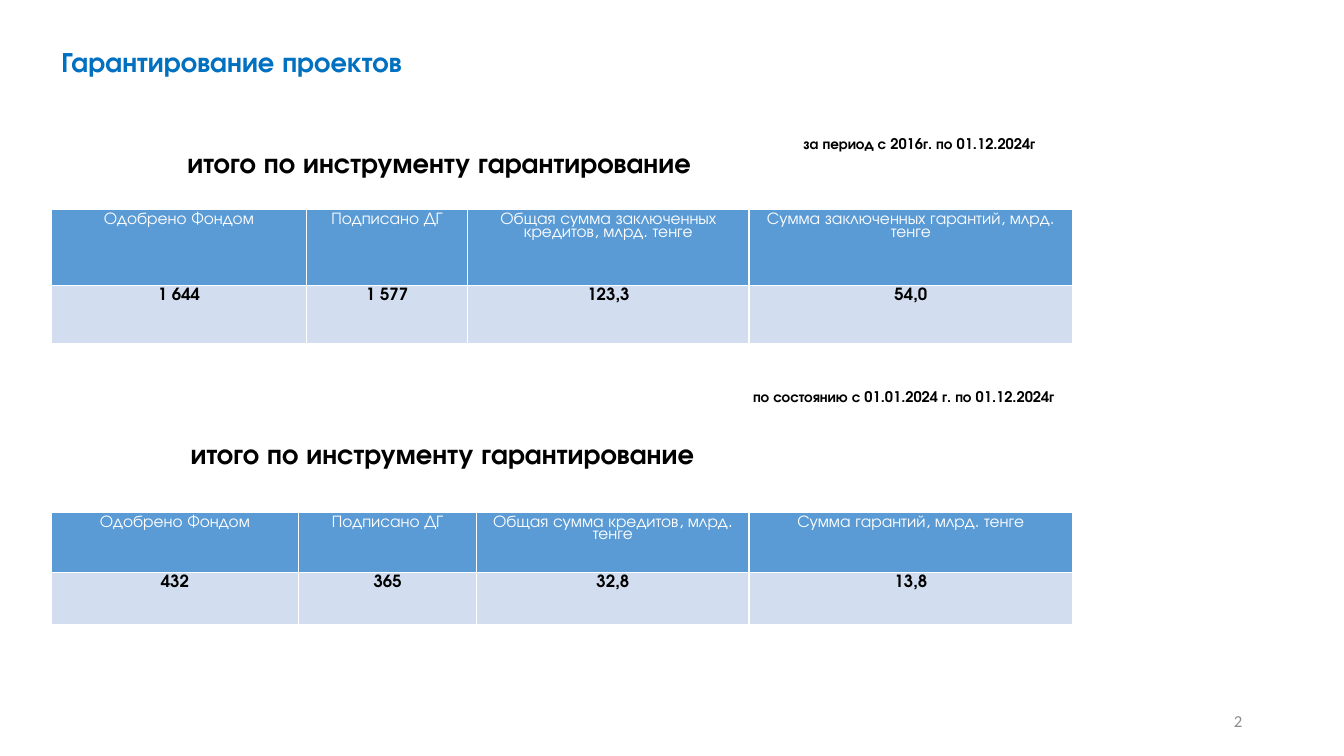
import pptx
import pptx.util
import pptx.dml.color
import pptx.enum.text
import pptx.oxml
import pptx.oxml.ns

PX = 9144  # EMU per px, 100 px to the inch
ALIGN = pptx.enum.text.PP_ALIGN
THEME = {
    "font": "TeX Gyre Adventor", "number_font": "Calibri",
    "title": "0070C0", "text": "000000", "number": "8C8C8C", "white": "FFFFFF",
    "header": "5B9BD5", "body": "D2DEEF",
    "heading_size": 20, "period_size": 10.5, "small_size": 12,
}


def write(frame, text, size, color, bold=True, align=ALIGN.LEFT, font=THEME["font"]):
    frame.text = text
    paragraph = frame.paragraphs[0]
    paragraph.alignment = align
    letters = paragraph.runs[0].font
    letters.name, letters.size, letters.bold = font, pptx.util.Pt(size), bold
    letters.color.rgb = pptx.dml.color.RGBColor.from_string(color)
    return paragraph


def add_text(left, top, width, height, *style, **options):
    frame = slide.shapes.add_textbox(left * PX, top * PX, width * PX, height * PX).text_frame
    frame.word_wrap = True
    write(frame, *style, **options)
    return frame


deck = pptx.Presentation()
deck.slide_width, deck.slide_height = 1333 * PX, 750 * PX
slide = deck.slides.add_slide(deck.slide_layouts[6])

# Title
add_text(51, 39, 479, 44, "Гарантирование проектов", THEME["heading_size"], THEME["title"])

# Periods
for period, left, top, width in [
    ("за период с 2016г. по 01.12.2024г", 787, 129, 319),
    ("по состоянию с 01.01.2024 г. по 01.12.2024г", 737, 380, 339),
]:
    add_text(left, top, width, 28, period, THEME["period_size"], THEME["text"])

# Table headings
for left, top, width, inset in [(176, 139, 584, 10), (117, 428, 735, 72)]:
    heading = add_text(left, top, width, 44, "итого по инструменту гарантирование",
                       THEME["heading_size"], THEME["text"])
    heading.margin_left = inset * PX

# Totals tables
totals = [
    (208, [253, 160, 279, 321], [75, 58], [
        ["Одобрено Фондом", "Подписано ДГ", "Общая сумма заключенных кредитов, млрд. тенге",
         "Сумма заключенных гарантий, млрд. тенге"],
        ["1 644", "1 577", "123,3", "54,0"]]),
    (508, [245, 177, 270, 321], [60, 52], [
        ["Одобрено Фондом", "Подписано ДГ", "Общая сумма кредитов, млрд. тенге",
         "Сумма гарантий, млрд. тенге"],
        ["432", "365", "32,8", "13,8"]]),
]
for top, widths, heights, rows in totals:
    table = slide.shapes.add_table(len(rows), len(widths), 51 * PX, top * PX,
                                   sum(widths) * PX, sum(heights) * PX).table
    for column, width in zip(table.columns, widths):
        column.width = width * PX
    for r, (values, height) in enumerate(zip(rows, heights)):
        table.rows[r].height = height * PX
        is_body = r > 0
        for c, value in enumerate(values):
            cell = table.cell(r, c)
            paragraph = write(cell.text_frame, value, THEME["small_size"],
                              THEME["text" if is_body else "white"],
                              bold=is_body, align=ALIGN.CENTER)
            paragraph.line_spacing = 0.8
            # Borders come before the fill in the cell properties
            properties = cell._tc.get_or_add_tcPr()
            for side in "LRTB":
                properties.append(pptx.oxml.parse_xml(
                    f'<a:ln{side} {pptx.oxml.ns.nsdecls("a")} w="12700"><a:solidFill>'
                    f'<a:srgbClr val="{THEME["white"]}"/></a:solidFill></a:ln{side}>'))
            cell.fill.solid()
            cell.fill.fore_color.rgb = pptx.dml.color.RGBColor.from_string(
                THEME["body" if is_body else "header"])

# Slide number
number = add_text(942, 695, 300, 40, "2", THEME["small_size"], THEME["number"],
                  bold=False, align=ALIGN.RIGHT, font=THEME["number_font"])
number.vertical_anchor = pptx.enum.text.MSO_ANCHOR.MIDDLE

deck.save("out.pptx")
